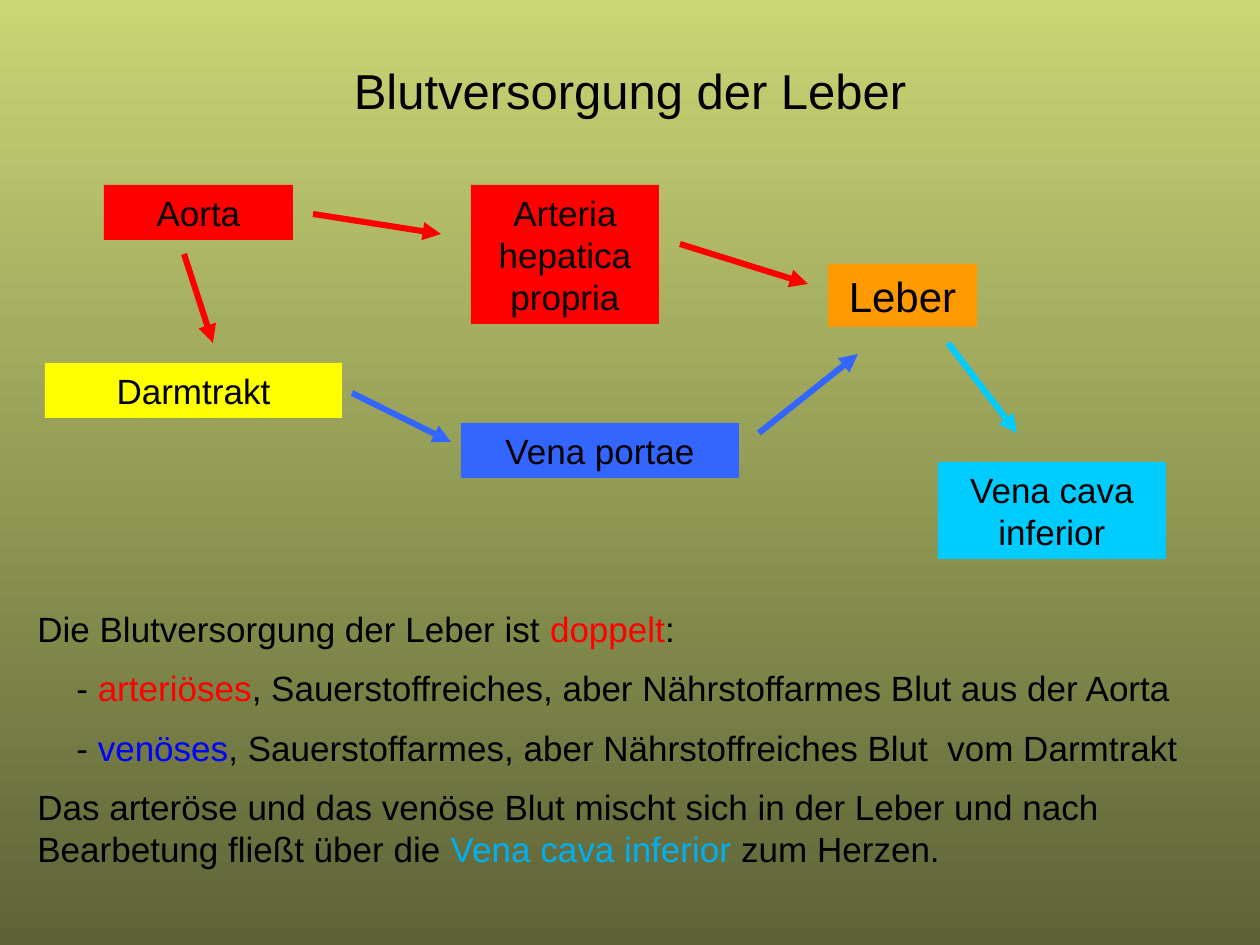
import pptx
import pptx.util
import pptx.dml.color
import pptx.enum.shapes
import pptx.enum.text
from lxml import etree

EMU_PER_PX = 914400 // 126
COLORS = {
    "black": "000000", "red": "FF0000", "yellow": "FFFF00",
    "orange": "FF9900", "blue": "3366FF", "cyan": "00CCFF",
    "venous": "0000FF", "cava": "00B0F0",
    "bg_top": "CAD575", "bg_bottom": "5D6336",
}


def px(n):
    return pptx.util.Emu(n * EMU_PER_PX)


def rgb(name):
    return pptx.dml.color.RGBColor.from_string(COLORS[name])


class Deck:
    font = "Arial"
    size = 20
    line_width = 3.5

    def __init__(self, width, height):
        self.prs = pptx.Presentation()
        self.prs.slide_width = px(width)
        self.prs.slide_height = px(height)
        self.s = None

    def add_slide(self, top, bottom):
        self.s = self.prs.slides.add_slide(self.prs.slide_layouts[6])
        fill = self.s.background.fill
        fill.gradient()
        fill.gradient_angle = 270
        for stop, name, position in zip(fill.gradient_stops, (top, bottom), (0, 1)):
            stop.color.rgb = rgb(name)
            stop.position = position

    def style(self, p, size, align):
        p.alignment = align
        p.font.name = self.font
        p.font.size = pptx.util.Pt(size)
        p.font.color.rgb = rgb("black")

    def title(self, box, text):
        sp = self.s.shapes.add_textbox(*map(px, box))
        tf = sp.text_frame
        tf.word_wrap = True
        tf.vertical_anchor = pptx.enum.text.MSO_ANCHOR.MIDDLE
        tf.text = text
        self.style(tf.paragraphs[0], 28, pptx.enum.text.PP_ALIGN.CENTER)

    def box(self, box, text, color, size=None):
        sp = self.s.shapes.add_shape(
            pptx.enum.shapes.MSO_SHAPE.RECTANGLE, *map(px, box))
        sp.shadow.inherit = False
        sp.fill.solid()
        sp.fill.fore_color.rgb = rgb(color)
        sp.line.fill.background()
        tf = sp.text_frame
        tf.word_wrap = True
        tf.vertical_anchor = pptx.enum.text.MSO_ANCHOR.TOP
        tf.text = text
        self.style(tf.paragraphs[0], size or self.size,
                   pptx.enum.text.PP_ALIGN.CENTER)

    def arrow(self, start, end, color):
        sp = self.s.shapes.add_connector(
            pptx.enum.shapes.MSO_CONNECTOR.STRAIGHT, *map(px, start + end))
        sp.line.color.rgb = rgb(color)
        sp.line.width = pptx.util.Pt(self.line_width)
        ln = sp.line._get_or_add_ln()
        etree.SubElement(ln, pptx.oxml.ns.qn("a:tailEnd"), type="triangle")
        etree.SubElement(ln.getparent(), pptx.oxml.ns.qn("a:effectLst"))

    def body(self, box, paragraphs):
        sp = self.s.shapes.add_textbox(*map(px, box))
        tf = sp.text_frame
        tf.word_wrap = True
        for i, (indent, runs) in enumerate(paragraphs):
            p = tf.add_paragraph() if i else tf.paragraphs[0]
            self.style(p, self.size, pptx.enum.text.PP_ALIGN.LEFT)
            if i:
                p.space_before = pptx.util.Pt(self.size / 2)
            if indent:
                p._p.get_or_add_pPr().set("marL", str(px(indent)))
            for text, color in runs:
                r = p.add_run()
                r.text = text
                r.font.color.rgb = rgb(color)


def main():
    deck = Deck(1260, 945)
    deck.add_slide("bg_top", "bg_bottom")
    deck.title((63, 26, 1134, 127), "Blutversorgung der Leber")

    deck.box((45, 363, 297, 55), "Darmtrakt", "yellow")
    deck.box((828, 264, 149, 63), "Leber", "orange", 24)
    deck.box((104, 185, 189, 55), "Aorta", "red")
    deck.box((461, 423, 278, 55), "Vena portae", "blue")
    deck.box((471, 185, 188, 139), "Arteria hepatica propria", "red")
    deck.box((938, 462, 228, 97), "Vena cava inferior", "cyan")

    for start, end, color in (
        ((313, 214), (441, 234), "red"),
        ((184, 254), (213, 343), "red"),
        ((352, 393), (451, 442), "blue"),
        ((680, 244), (808, 284), "red"),
        ((948, 343), (1017, 433), "cyan"),
        ((759, 433), (858, 354), "blue"),
    ):
        deck.arrow(start, end, color)

    deck.body((25, 601, 1235, 289), (
        (0, (("Die Blutversorgung der Leber ist ", "black"),
             ("doppelt", "red"), (":", "black"))),
        (39, (("- ", "black"), ("arteriöses", "red"),
              (", Sauerstoffreiches, aber Nährstoffarmes Blut aus der Aorta", "black"))),
        (39, (("- ", "black"), ("venöses", "venous"),
              (", Sauerstoffarmes, aber Nährstoffreiches Blut  vom Darmtrakt", "black"))),
        (0, (("Das arteröse und das venöse Blut mischt sich in der Leber "
              "und nach Bearbetung fließt über die ", "black"),
             ("Vena cava inferior ", "cava"), ("zum Herzen.", "black"))),
    ))
    deck.prs.save("out.pptx")


if __name__ == "__main__":
    main()
